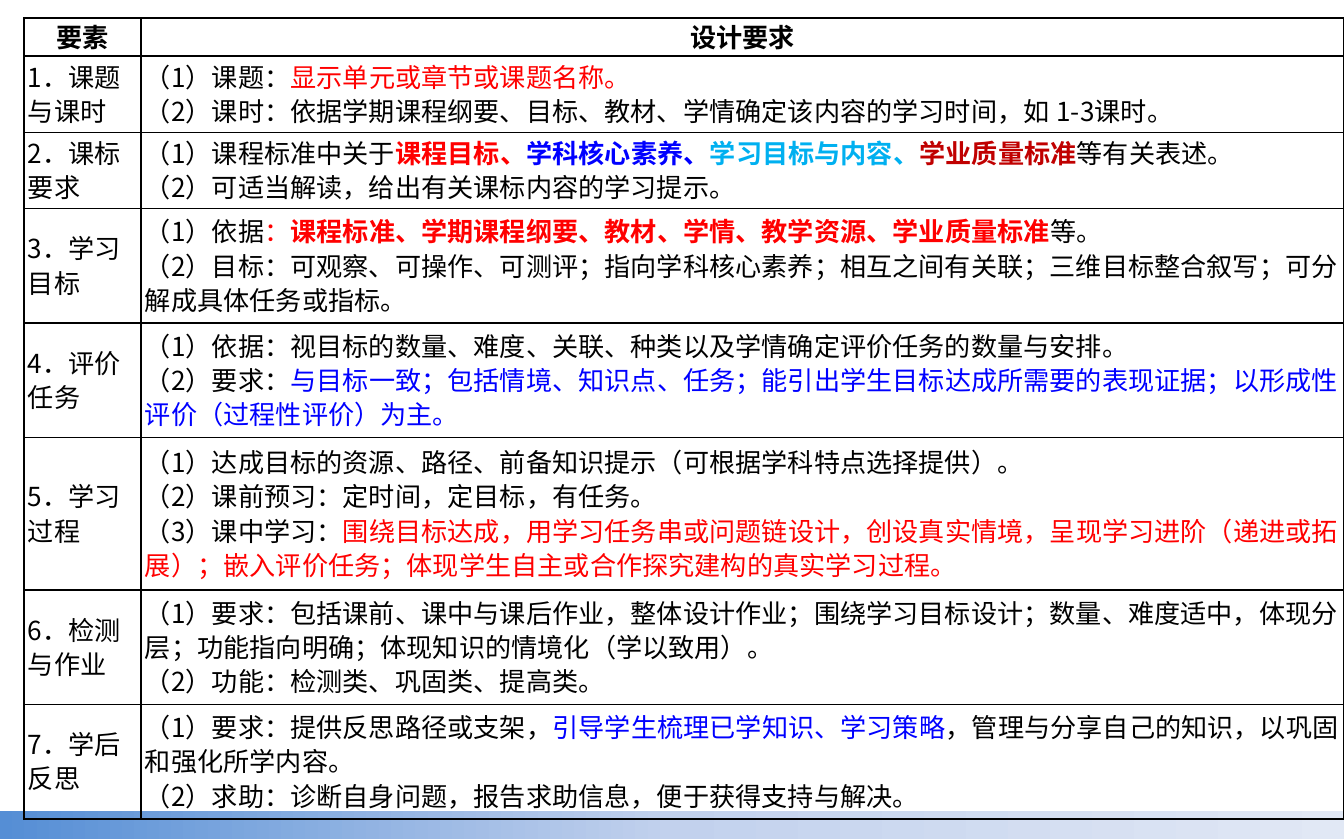
import dataclasses
import pptx
import pptx.dml.color
import pptx.enum.shapes
import pptx.enum.text
import pptx.oxml
import pptx.oxml.ns
import pptx.util

PX = 914400 / 134.4


@dataclasses.dataclass(frozen=True)
class Theme:
    """Colours, font and sizes of the slide."""
    font: str = "Noto Sans CJK SC"
    size: int = 14
    lead: float = 0.9
    rule: int = 1
    black: str = "000000"
    red: str = "FF0000"
    blue: str = "0000FF"
    sky: str = "00B0F0"
    wine: str = "C00000"
    fade: tuple = ((0, "558ED5"), (50, "C2D1ED"), (100, "E1E8F5"))


THEME = Theme()
RED, BLUE = THEME.red, THEME.blue
HEADS = ("要素", "设计要求")
ROWS = [
    ("1．课题与课时", 2, [
        ["（1）课题：", ("显示单元或章节或课题名称。", RED)],
        ["（2）课时：依据学期课程纲要、目标、教材、学情确定该内容的学习时间，如 1-3课时。"]]),
    ("2．课标要求", 2, [
        ["（1）课程标准中关于", ("课程目标、", RED, True), ("学科核心素养、", BLUE, True),
         ("学习目标与内容、", THEME.sky, True), ("学业质量标准", THEME.wine, True), "等有关表述。"],
        ["（2）可适当解读，给出有关课标内容的学习提示。"]]),
    ("3．学习目标", 3, [
        ["（1）依据", ("：", RED),
         ("课程标准、学期课程纲要、教材、学情、教学资源、学业质量标准", RED, True), "等。"],
        ["（2）目标：可观察、可操作、可测评；指向学科核心素养；相互之间有关联；"
         "三维目标整合叙写；可分解成具体任务或指标。"]]),
    ("4．评价任务", 3, [
        ["（1）依据：视目标的数量、难度、关联、种类以及学情确定评价任务的数量与安排。"],
        ["（2）要求：", ("与目标一致；包括情境、知识点、任务；能引出学生目标达成所需要的表现证据；"
                    "以形成性评价（过程性评价）为主。", BLUE)]]),
    ("5．学习过程", 4, [
        ["（1）达成目标的资源、路径、前备知识提示（可根据学科特点选择提供）。"],
        ["（2）课前预习：定时间，定目标，有任务。"],
        ["（3）课中学习：", ("围绕目标达成，用学习任务串或问题链设计，创设真实情境，呈现学习进阶"
                      "（递进或拓展）；嵌入评价任务；体现学生自主或合作探究建构的真实学习过程。", RED)]]),
    ("6．检测与作业", 3, [
        ["（1）要求：包括课前、课中与课后作业，整体设计作业；围绕学习目标设计；"
         "数量、难度适中，体现分层；功能指向明确；体现知识的情境化（学以致用）。"],
        ["（2）功能：检测类、巩固类、提高类。"]]),
    ("7．学后反思", 3, [
        ["（1）要求：提供反思路径或支架，", ("引导学生梳理已学知识、学习策略", BLUE),
         "，管理与分享自己的知识，以巩固和强化所学内容。"],
        ["（2）求助：诊断自身问题，报告求助信息，便于获得支持与解决。"]]),
]


def px(count):
    """Turn pixels into EMU."""
    return round(count * PX)


def node(tag, **attrs):
    """Make a drawing element with attributes."""
    item = pptx.oxml.parse_xml(f"<a:{tag} {pptx.oxml.ns.nsdecls('a')}/>")
    for name, value in attrs.items():
        item.set(name, str(value))
    return item


def tint(color):
    """Make a colour element."""
    return node("srgbClr", val=color)


def add_band(slide, left, top, width, height):
    """Draw the fading band in the given box."""
    band = slide.shapes.add_shape(pptx.enum.shapes.MSO_SHAPE.RECTANGLE,
                                  px(left), px(top), px(width), px(height))
    band.shadow.inherit = False
    band.line.fill.background()
    band.fill.gradient()
    band.fill.gradient_angle = 0
    stops = band.fill._fill._gradFill.gsLst
    for stop in list(stops):
        stops.remove(stop)
    for place, color in THEME.fade:
        stop = node("gs", pos=place * 1000)
        stop.append(tint(color))
        stops.append(stop)


def add_edges(cell):
    """Rule all four sides of a cell."""
    props = cell._tc.get_or_add_tcPr()
    for index, side in enumerate(("lnL", "lnR", "lnT", "lnB")):
        edge = node(side, w=pptx.util.Pt(THEME.rule))
        fill = node("solidFill")
        fill.append(tint(THEME.black))
        edge.append(fill)
        props.insert(index, edge)


def fill_cell(cell, paras, head=False):
    """Write paragraphs of plain or marked runs into a cell."""
    cell.fill.background()
    add_edges(cell)
    cell.margin_left = cell.margin_right = px(4)
    cell.margin_top = cell.margin_bottom = 0
    cell.vertical_anchor = pptx.enum.text.MSO_ANCHOR.MIDDLE
    frame = cell.text_frame
    for index, parts in enumerate(paras):
        para = frame.add_paragraph() if index else frame.paragraphs[0]
        para.line_spacing = THEME.lead
        align = pptx.enum.text.PP_ALIGN
        para.alignment = align.CENTER if head else align.LEFT
        for part in parts:
            text, color, bold = (part, THEME.black, head) if isinstance(part, str) else (*part, False)[:3]
            run = para.add_run()
            run.text = text
            run.font.size = pptx.util.Pt(THEME.size)
            run.font.name = THEME.font
            run.font.bold = bold
            run.font.color.rgb = pptx.dml.color.RGBColor.from_string(color)
            run._r.get_or_add_rPr().append(node("ea", typeface=THEME.font))


def add_grid(slide, left, top, width, height):
    """Draw the table of needs, its rows sized by their lines of text."""
    lines = [1] + [count for _, count, _ in ROWS]
    grid = slide.shapes.add_table(len(lines), 2, px(left), px(top),
                                  px(width), px(height)).table
    grid.first_row = grid.horz_banding = False
    first = 117
    grid.columns[0].width = px(first)
    grid.columns[1].width = px(width - first)
    for row, count in zip(grid.rows, lines):
        row.height = px(height * count / sum(lines))
    for col, head in enumerate(HEADS):
        fill_cell(grid.cell(0, col), [[head]], head=True)
    for index, (label, _, paras) in enumerate(ROWS, 1):
        fill_cell(grid.cell(index, 0), [[label]])
        fill_cell(grid.cell(index, 1), paras)


def main():
    """Build and save the slide."""
    deck = pptx.Presentation()
    deck.slide_width, deck.slide_height = px(1344), px(840)
    slide = deck.slides.add_slide(deck.slide_layouts[6])
    add_band(slide, 0, 811, 1344, 28)
    add_grid(slide, 24, 18, 1320, 801)
    deck.save("out.pptx")


if __name__ == "__main__":
    main()
